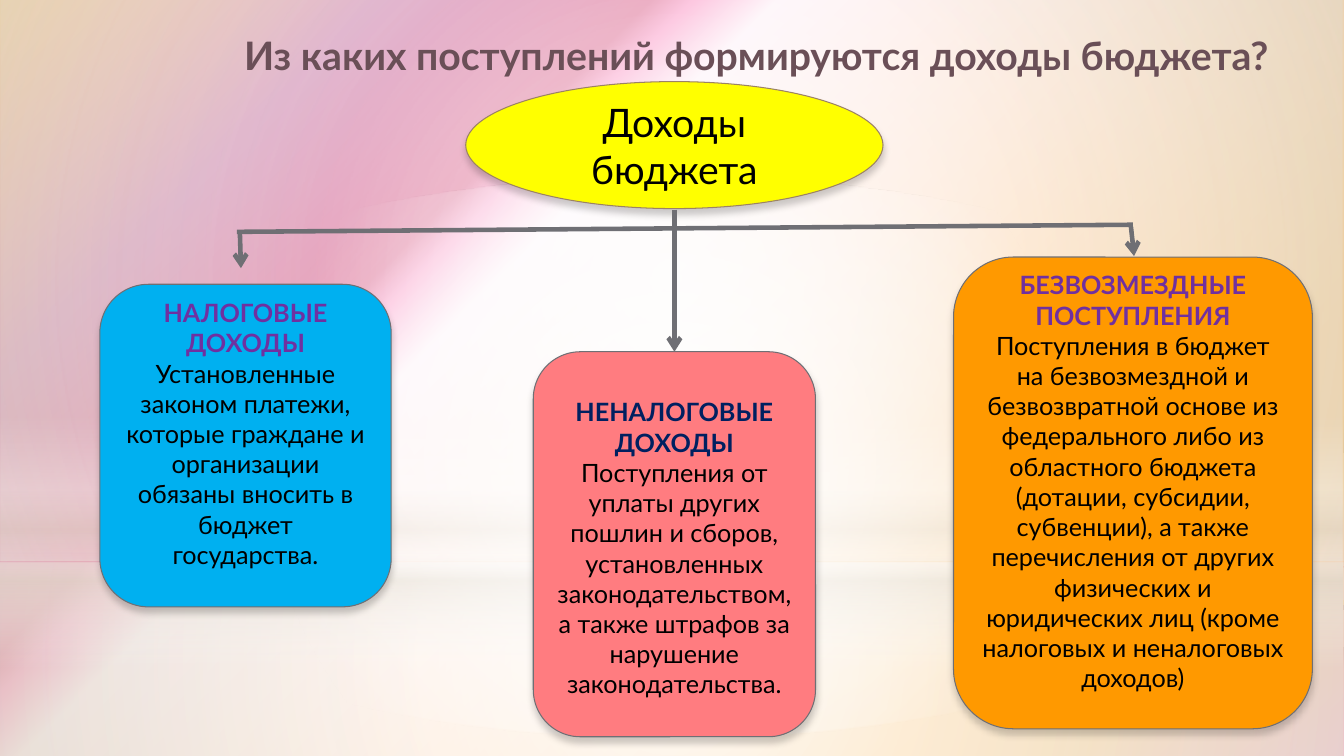
import pptx
import pptx.util
import pptx.dml.color
import pptx.enum.shapes
import pptx.enum.text
import pptx.oxml
import pptx.oxml.ns

Pt, Inches = pptx.util.Pt, pptx.util.Inches
qn = pptx.oxml.ns.qn
SHAPE = pptx.enum.shapes.MSO_SHAPE
ALIGN = pptx.enum.text.PP_ALIGN
ANCHOR = pptx.enum.text.MSO_ANCHOR


def rgb(color):
    return pptx.dml.color.RGBColor.from_string(color)


def xml(text):
    """Parse one element whose tags use the a: prefix."""
    head, rest = text.split(" ", 1)
    return pptx.oxml.parse_xml(f"{head} {pptx.oxml.ns.nsdecls('a')} {rest}")


def gradient(stops, centre=None):
    """Stops are (position, colour, opacity) in percent; no centre means top to bottom."""
    gs = "".join(
        f'<a:gs pos="{pos * 1000}"><a:srgbClr val="{color}">'
        f'<a:alpha val="{alpha * 1000}"/></a:srgbClr></a:gs>'
        for pos, color, alpha in stops)
    if centre:
        l, t, r, b = (1000 * side for side in centre)
        way = (f'<a:path path="circle"><a:fillToRect l="{l}" t="{t}" r="{r}" b="{b}"/>'
               '</a:path>')
    else:
        way = '<a:lin ang="5400000" scaled="0"/>'
    return xml(f'<a:gradFill rotWithShape="1"><a:gsLst>{gs}</a:gsLst>{way}</a:gradFill>')


class Board:
    """Style and current slide; places are percent of the slide's width and height."""
    font = "Lato"
    dark, grey = "000000", "6F6F74"
    large, normal = 28, 18

    def __init__(self, prs):
        self.prs = prs
        self.s = prs.slides.add_slide(prs.slide_layouts[6])

    def x(self, share):
        return round(self.prs.slide_width * share / 100)

    def y(self, share):
        return round(self.prs.slide_height * share / 100)

    def box(self, at):
        left, top, width, height = at
        return self.x(left), self.y(top), self.x(width), self.y(height)

    def swap_fill(self, fill, element, grad):
        fill.solid()
        solid = element.find(".//" + qn("a:solidFill"))
        solid.getparent().replace(solid, grad)

    def background(self, stops, centre):
        self.swap_fill(self.s.background.fill, self.s.element, gradient(stops, centre))

    def glow(self, kind, at, stops, centre=None):
        sp = self.s.shapes.add_shape(kind, *self.box(at))
        sp.shadow.inherit = False
        sp.line.fill.background()
        self.swap_fill(sp.fill, sp.element.spPr, gradient(stops, centre))

    def add_text(self, tf, paragraphs, size, align):
        """Each paragraph is (text, colour, bold)."""
        tf.word_wrap = True
        for i, (text, color, bold) in enumerate(paragraphs):
            p = tf.add_paragraph() if i else tf.paragraphs[0]
            p.alignment = align
            r = p.add_run()
            r.text = text
            r.font.name, r.font.size, r.font.bold = self.font, Pt(size), bold
            r.font.color.rgb = rgb(color)

    def title(self, at, text, color):
        sp = self.s.shapes.add_textbox(*self.box(at))
        self.add_text(sp.text_frame, [(text, color, True)], self.large, ALIGN.RIGHT)

    def block(self, kind, at, fill, line, paragraphs, size, top=0.05, bottom=0.05):
        sp = self.s.shapes.add_shape(kind, *self.box(at))
        sp.fill.solid()
        sp.fill.fore_color.rgb = rgb(fill)
        sp.line.color.rgb = rgb(line)
        sp.line.width = Pt(0.75)
        sp.shadow.inherit = False
        sp.element.spPr.find(qn("a:effectLst")).append(xml(
            f'<a:outerShdw blurRad="{Pt(5)}" dist="{Pt(4)}" dir="5400000" rotWithShape="0">'
            '<a:srgbClr val="000000"><a:alpha val="20000"/></a:srgbClr></a:outerShdw>'))
        tf = sp.text_frame
        tf.vertical_anchor = ANCHOR.MIDDLE
        tf.margin_top, tf.margin_bottom = Inches(top), Inches(bottom)
        self.add_text(tf, paragraphs, size, ALIGN.CENTER)

    def card(self, at, fill, heading, color, body, **margins):
        self.block(SHAPE.ROUNDED_RECTANGLE, at, fill, self.grey,
                   [(heading, color, True), (body, self.dark, False)],
                   self.normal, **margins)

    def line(self, x1, y1, x2, y2, arrow=True):
        c = self.s.shapes.add_connector(
            pptx.enum.shapes.MSO_CONNECTOR.STRAIGHT,
            self.x(x1), self.y(y1), self.x(x2), self.y(y2))
        c.line.color.rgb = rgb(self.grey)
        c.line.width = Pt(3.25)
        spPr = c.element.spPr
        if arrow:
            spPr.find(qn("a:ln")).append(xml('<a:tailEnd type="arrow"/>'))
        spPr.append(xml("<a:effectLst />"))


def main():
    prs = pptx.Presentation()
    prs.slide_width, prs.slide_height = Inches(13.33), Inches(7.5)
    board = Board(prs)
    white, sand, middle = "FFFFFF", "E3DCCF", (50, 50, 50, 50)

    # Background and its soft light
    board.background(
        [(0, "FC9FCB", 100), (13, "F8B049", 100), (21, "F8B049", 100),
         (63, "FEE7F2", 100), (67, "F952A0", 100), (69, "C50849", 100),
         (82, "B43E85", 100), (100, "F8B049", 100)], (100, 100, 0, 0))
    horizon = 74.4
    board.glow(SHAPE.RECTANGLE, (0, horizon, 100, 100 - horizon),
               [(0, white, 91), (37, white, 76), (100, sand, 79)], middle)
    board.glow(SHAPE.RECTANGLE, (0, 0, 100, horizon),
               [(0, white, 89), (48, white, 62), (100, sand, 79)], middle)
    board.glow(SHAPE.RECTANGLE, (0, 54.93, 100, 33.33),
               [(0, white, 0), (29, white, 30), (45, sand, 40),
                (55, white, 26), (65, sand, 60), (100, white, 0)])
    board.glow(SHAPE.OVAL, (0, 23.33, 100, horizon),
               [(0, white, 100), (56, white, 0)], middle)

    # Title and the root of the tree
    board.title((10.05, 3.47, 85.05, 12.4),
                "Из каких поступлений формируются доходы бюджета?", "6A4F57")
    board.block(SHAPE.OVAL, (34.65, 10.8, 31.05, 16.8), "FFFF00", "9C8265",
                [("Доходы бюджета", board.dark, False)], board.large)

    # Three kinds of income
    board.card((7.43, 37.6, 21.68, 42.67), "00B0F0", "НАЛОГОВЫЕ ДОХОДЫ", "7030A0",
               "Установленные законом платежи, которые граждане и организации "
               "обязаны вносить в бюджет государства.", bottom=0.29)
    board.card((39.68, 46.53, 21, 50.93), "FF7C80", "НЕНАЛОГОВЫЕ ДОХОДЫ", "002060",
               "Поступления от уплаты других пошлин и сборов, установленных "
               "законодательством, а также штрафов за нарушение законодательства.",
               top=0.12)
    board.card((70.95, 34, 26.7, 62.4), "FF9900", "БЕЗВОЗМЕЗДНЫЕ ПОСТУПЛЕНИЯ", "7030A0",
               "Поступления в бюджет на безвозмездной и безвозвратной основе из "
               "федерального либо из областного бюджета (дотации, субсидии, субвенции), "
               "а также перечисления от других физических и юридических лиц "
               "(кроме налоговых и неналоговых доходов)", bottom=0.28)

    # Crossbar and arrows to the cards
    board.line(17.63, 30.67, 84.3, 29.73, arrow=False)
    for ends in [(50.18, 27.73, 50.18, 46.53),
                 (17.85, 30.8, 17.93, 35.47),
                 (84.15, 30, 84.38, 33.87)]:
        board.line(*ends)

    prs.save("out.pptx")


if __name__ == "__main__":
    main()
